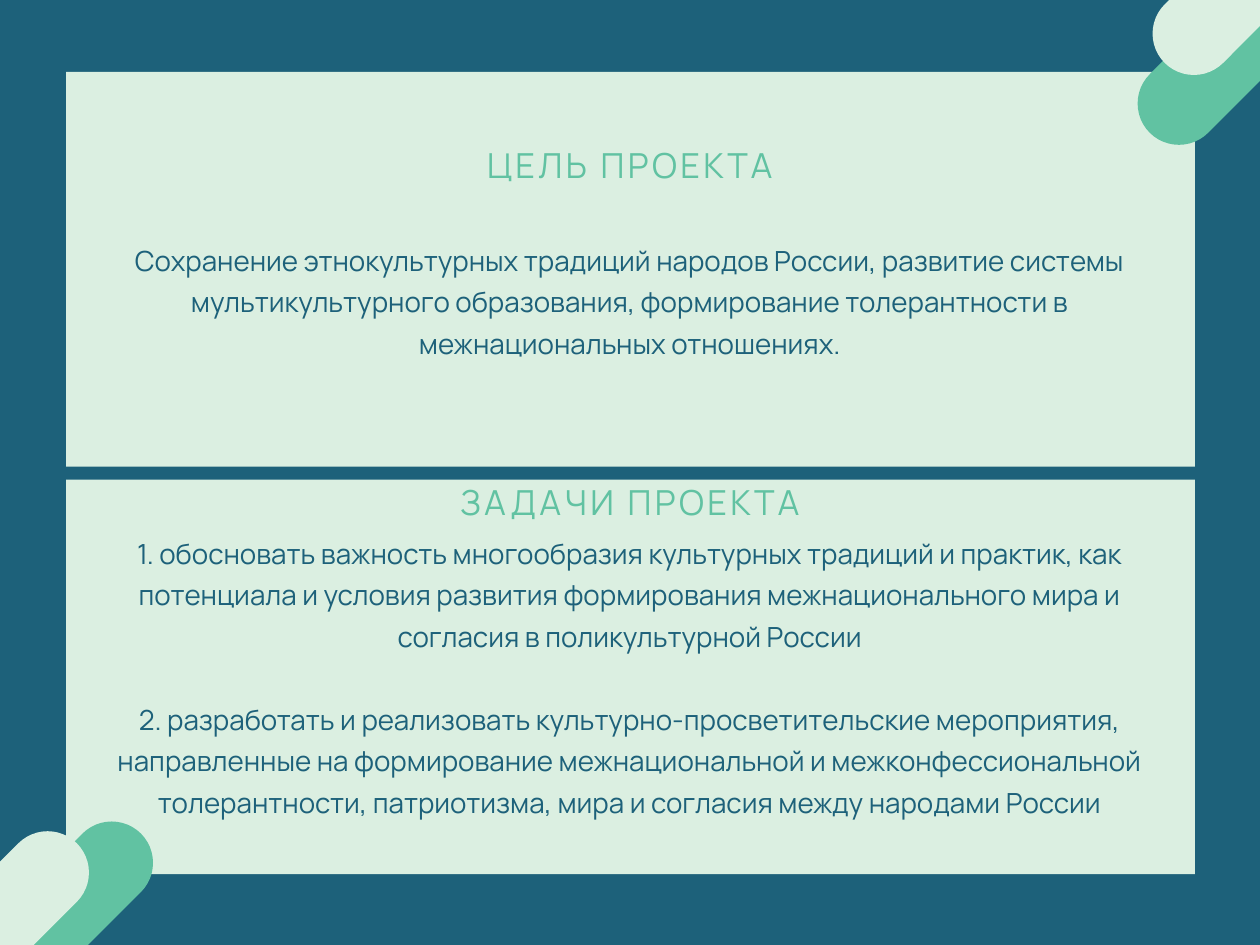
import pptx
import pptx.util
import pptx.dml.color
import pptx.enum.shapes
import pptx.enum.text

Inches = pptx.util.Inches
Pt = pptx.util.Pt
RGBColor = pptx.dml.color.RGBColor
MSO_SHAPE = pptx.enum.shapes.MSO_SHAPE

NAVY = RGBColor(0x1D, 0x61, 0x7A)
MINT = RGBColor(0xDB, 0xEF, 0xE1)
GREEN = RGBColor(0x61, 0xC2, 0xA2)

GOAL = (
    "Cохранение этнокультурных традиций народов России, развитие системы "
    "мультикультурного образования, формирование толерантности в "
    "межнациональных отношениях."
)
TASKS = [
    "1. обосновать важность многообразия культурных традиций и практик, как "
    "потенциала и условия развития формирования межнационального мира и "
    "согласия в поликультурной России",
    "2. разработать и реализовать культурно-просветительские мероприятия, "
    "направленные на формирование межнациональной и межконфессиональной "
    "толерантности, патриотизма, мира и согласия между народами России",
]


class ProjectSlide:
    font = "Manrope"
    text_left, text_width = 0.86, 8.95
    heading_size, heading_leading, heading_tracking = 21, 27.3, 2.1
    body_size, body_leading = 16.9, 25.3

    def __init__(self, deck):
        self.slide = deck.slides.add_slide(deck.slide_layouts[6])
        background = self.slide.background.fill
        background.solid()
        background.fore_color.rgb = NAVY

    def block(self, preset, left, top, width, height, color):
        block = self.slide.shapes.add_shape(
            preset, Inches(left), Inches(top), Inches(width), Inches(height))
        block.shadow.inherit = False
        block.fill.solid()
        block.fill.fore_color.rgb = color
        block.line.fill.background()
        return block

    def panel(self, top):
        self.block(MSO_SHAPE.RECTANGLE, 0.56, top, 9.56, 3.34, MINT)

    def pill(self, left, top, length, color):
        pill = self.block(
            MSO_SHAPE.ROUNDED_RECTANGLE, left, top, length, 0.7, color)
        pill.adjustments[0] = 0.5
        pill.rotation = 315

    def text(self, top, height, paragraphs, size, leading, color, tracking=0):
        frame = self.slide.shapes.add_textbox(
            Inches(self.text_left), Inches(top),
            Inches(self.text_width), Inches(height)).text_frame
        frame.word_wrap = True
        frame.margin_left = frame.margin_right = 0
        frame.margin_top = frame.margin_bottom = 0
        for index, wording in enumerate(paragraphs):
            paragraph = frame.add_paragraph() if index else frame.paragraphs[0]
            paragraph.alignment = pptx.enum.text.PP_ALIGN.CENTER
            paragraph.line_spacing = Pt(leading)
            paragraph.space_before = Pt(leading if index else 0)
            run = paragraph.add_run()
            run.text = wording
            run.font.name = self.font
            run.font.size = Pt(size)
            run.font.color.rgb = color
            if tracking:
                run.font._element.set("spc", str(round(tracking * 100)))

    def heading(self, top, height, wording):
        self.text(top, height, [wording], self.heading_size,
                  self.heading_leading, GREEN, self.heading_tracking)

    def body(self, top, height, paragraphs):
        self.text(top, height, paragraphs, self.body_size,
                  self.body_leading, NAVY)


def main():
    deck = pptx.Presentation()
    deck.slide_width = Inches(10.67)
    deck.slide_height = Inches(8)
    project = ProjectSlide(deck)

    project.panel(0.61)
    project.heading(1.19, 0.74, "ЦЕЛЬ ПРОЕКТА")
    project.body(1.99, 1.35, [GOAL])

    project.panel(4.06)
    project.heading(4.04, 0.36, "ЗАДАЧИ ПРОЕКТА")
    project.body(4.47, 3.01, TASKS)

    for left, top, length, color in [
        (-1.06, 7.64, 2.64, GREEN),
        (-0.8, 7.39, 1.7, MINT),
        (9.35, -0.16, 2.64, GREEN),
        (9.63, -0.38, 1.59, MINT),
    ]:
        project.pill(left, top, length, color)

    deck.save("out.pptx")


if __name__ == "__main__":
    main()
